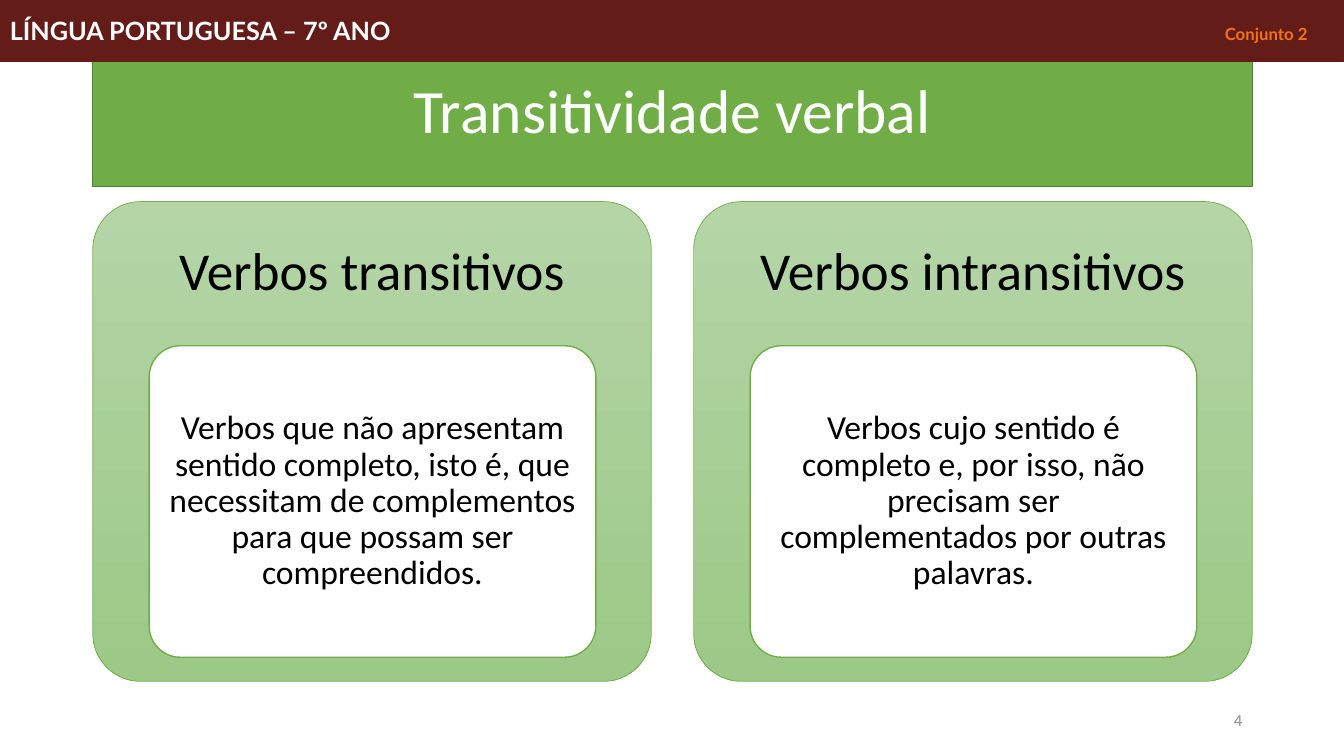
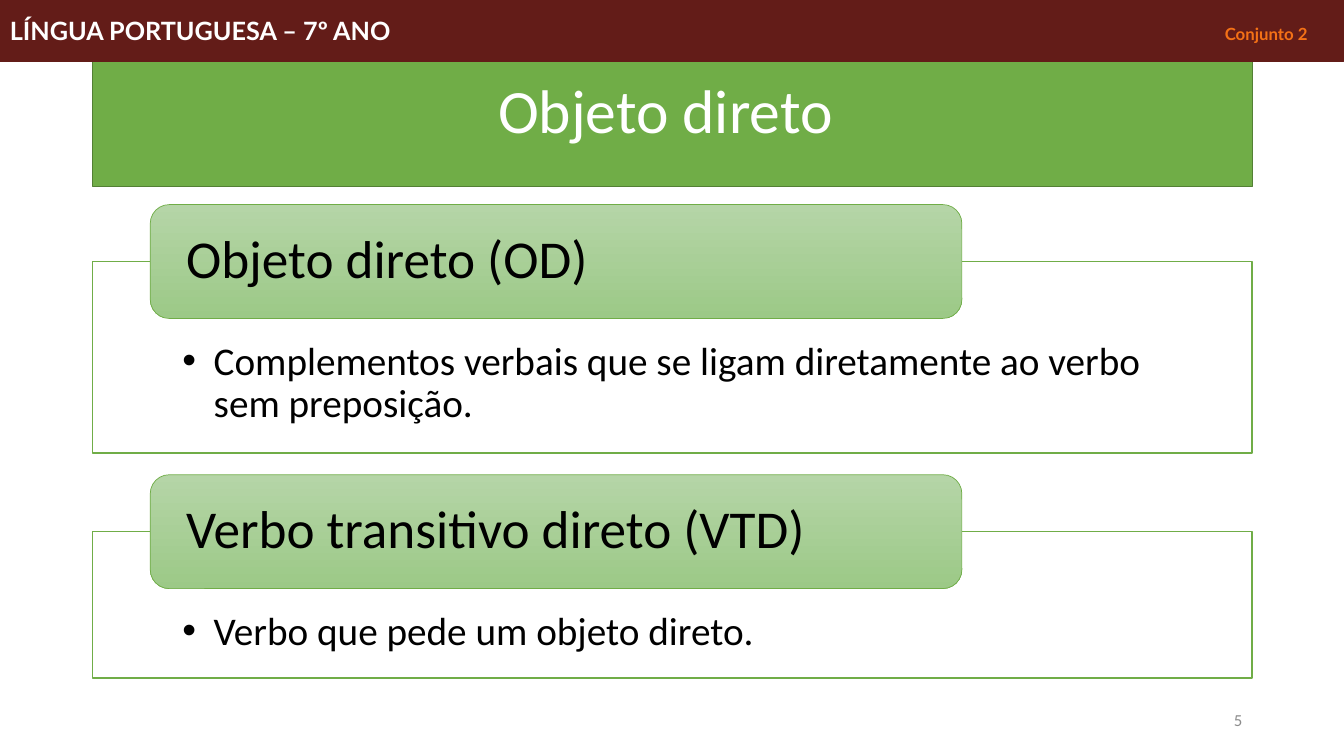
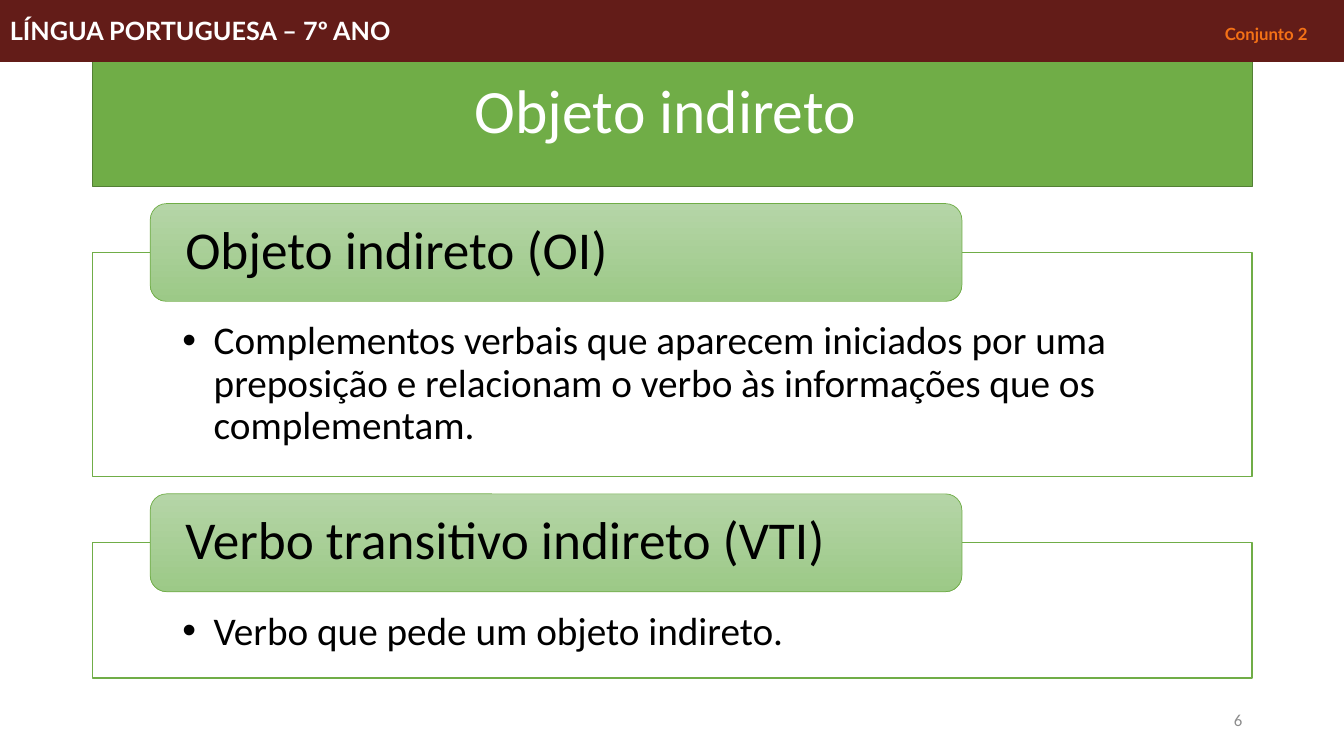
"""Build three lesson slides on verb transitivity."""
from lxml import etree
from pptx import Presentation
from pptx.dml.color import RGBColor
from pptx.enum.shapes import MSO_SHAPE
from pptx.enum.text import MSO_ANCHOR, MSO_AUTO_SIZE, PP_ALIGN
from pptx.oxml.ns import qn
from pptx.util import Inches, Pt

RECT, ROUND = MSO_SHAPE.RECTANGLE, MSO_SHAPE.ROUNDED_RECTANGLE
TOP, MIDDLE = MSO_ANCHOR.TOP, MSO_ANCHOR.MIDDLE
LEFT, CENTER, RIGHT = PP_ALIGN.LEFT, PP_ALIGN.CENTER, PP_ALIGN.RIGHT
FIXED = MSO_AUTO_SIZE.NONE

WHITE = RGBColor(0xFF, 0xFF, 0xFF)
BLACK = RGBColor(0x00, 0x00, 0x00)
GREEN = RGBColor(0x70, 0xAD, 0x47)
MOSS = RGBColor(0x53, 0x80, 0x35)
PALE = RGBColor(0xB5, 0xD5, 0xA7)
LEAF = RGBColor(0x9C, 0xC9, 0x87)
WINE = RGBColor(0x63, 0x1C, 0x18)
ORANGE = RGBColor(0xF4, 0x71, 0x16)
GRAY = RGBColor(0x8C, 0x8C, 0x8C)

EDGE, WIDTH = 0.92, 11.5
PANEL, TALL = 5.54, 4.76
HEAD = 1.43

TITLES = ["Transitividade verbal", "Objeto direto ", "Objeto indireto "]
PANELS = [
    ("Verbos transitivos",
     "Verbos que não apresentam sentido completo, isto é, que necessitam de "
     "complementos para que possam ser compreendidos."),
    ("Verbos intransitivos",
     "Verbos cujo sentido é completo e, por isso, não precisam ser "
     "complementados por outras palavras."),
]
LISTS = [
    (1.13, [
        (2.03, 1.9, "Objeto direto (OD)",
         "Complementos verbais que se ligam diretamente ao verbo sem preposição."),
        (4.71, 1.45, "Verbo transitivo direto (VTD)",
         "Verbo que pede um objeto direto."),
    ]),
    (0.97, [
        (2.02, 2.22, "Objeto indireto (OI)",
         "Complementos verbais que aparecem iniciados por uma preposição e "
         "relacionam o verbo às informações que os complementam."),
        (4.9, 1.34, "Verbo transitivo indireto (VTI)",
         "Verbo que pede um objeto indireto."),
    ]),
]


def box(slide, kind, at, fill, line, weight):
    shape = slide.shapes.add_shape(kind, *map(Inches, at))
    shape.shadow.inherit = False
    if fill is None:
        shape.fill.gradient()
        shape.fill.gradient_angle = 270
        for stop, color in zip(shape.fill.gradient_stops, (PALE, LEAF)):
            stop.color.rgb = color
    else:
        shape.fill.solid()
        shape.fill.fore_color.rgb = fill
    shape.line.color.rgb = line
    shape.line.width = Pt(weight)
    return shape


def write(shape, text, size, color, align, anchor=MIDDLE,
          inset=(0.1, 0.05, 0.1, 0.05), bullet=False):
    frame = shape.text_frame
    frame.word_wrap = True
    frame.auto_size = FIXED
    frame.vertical_anchor = anchor
    (frame.margin_left, frame.margin_top,
     frame.margin_right, frame.margin_bottom) = map(Inches, inset)
    para = frame.paragraphs[0]
    para.text = text
    para.alignment = align
    para.line_spacing = 0.9
    if bullet:
        props = para._p.get_or_add_pPr()
        props.set("marL", str(Inches(0.31)))
        props.set("indent", str(Inches(-0.31)))
        etree.SubElement(props, qn("a:buFont"), typeface="Arial")
        etree.SubElement(props, qn("a:buChar"), char="•")
    para.font.name = "Calibri"
    para.font.size = Pt(size)
    para.font.color.rgb = color


prs = Presentation()
prs.slide_width, prs.slide_height = Inches(13.33), Inches(7.5)

slides = []
for number, title in enumerate(TITLES, 4):
    slide = prs.slides.add_slide(prs.slide_layouts[5])
    slides.append(slide)

    head = slide.shapes.title
    head.left, head.top = Inches(EDGE), Inches(0.4)
    head.width, head.height = Inches(WIDTH), Inches(1.45)
    head.fill.solid()
    head.fill.fore_color.rgb = GREEN
    head.line.color.rgb = MOSS
    head.line.width = Pt(1)
    write(head, title, 44, WHITE, CENTER)

    page = slide.shapes.add_textbox(*map(Inches, (9.42, 6.95, 3, 0.4)))
    write(page, str(number), 12, GRAY, RIGHT)

    band = box(slide, RECT, (0, 0, 13.33, 0.61), WINE, WINE, 0.75)
    band.text_frame.vertical_anchor = MIDDLE
    para = band.text_frame.paragraphs[0]
    para.alignment = LEFT
    tabs = etree.SubElement(para._p.get_or_add_pPr(), qn("a:tabLst"))
    etree.SubElement(tabs, qn("a:tab"), pos=str(Inches(12.05)), algn="l")
    para.font.name = "Lato"
    para.font.bold = True
    for text, size, color in (("LÍNGUA PORTUGUESA – 7º ANO\t", 18, WHITE),
                              ("Conjunto 2", 12, ORANGE)):
        run = para.add_run()
        run.text = text
        run.font.size = Pt(size)
        run.font.color.rgb = color

for i, (name, text) in enumerate(PANELS):
    left = EDGE + i * (WIDTH - PANEL)
    panel = box(slides[0], ROUND, (left, 2, PANEL, TALL), None, GREEN, 0.5)
    panel.adjustments[0] = 0.1
    write(panel, name, 38, BLACK, CENTER, inset=(0, 0, 0, TALL - HEAD))
    card = box(slides[0], ROUND, (left + 0.56, 2 + HEAD, 4.43, 3.09),
               WHITE, GREEN, 1)
    card.adjustments[0] = 0.1
    write(card, text, 24, BLACK, CENTER, inset=(0.07, 0.05, 0.07, 0.05))

for slide, (high, items) in zip(slides[1:], LISTS):
    for top, deep, name, text in items:
        body = box(slide, RECT, (EDGE, top + high / 2, WIDTH, deep),
                   WHITE, GREEN, 1)
        write(body, text, 28, BLACK, LEFT, TOP,
              (0.89, 0.7 * high, 0.89, 0.22), True)
        label = box(slide, ROUND, (1.49, top, 8.05, high), None, GREEN, 0.5)
        write(label, name, 38, BLACK, LEFT, inset=(0.3, 0, 0.3, 0))

prs.save("out.pptx")
